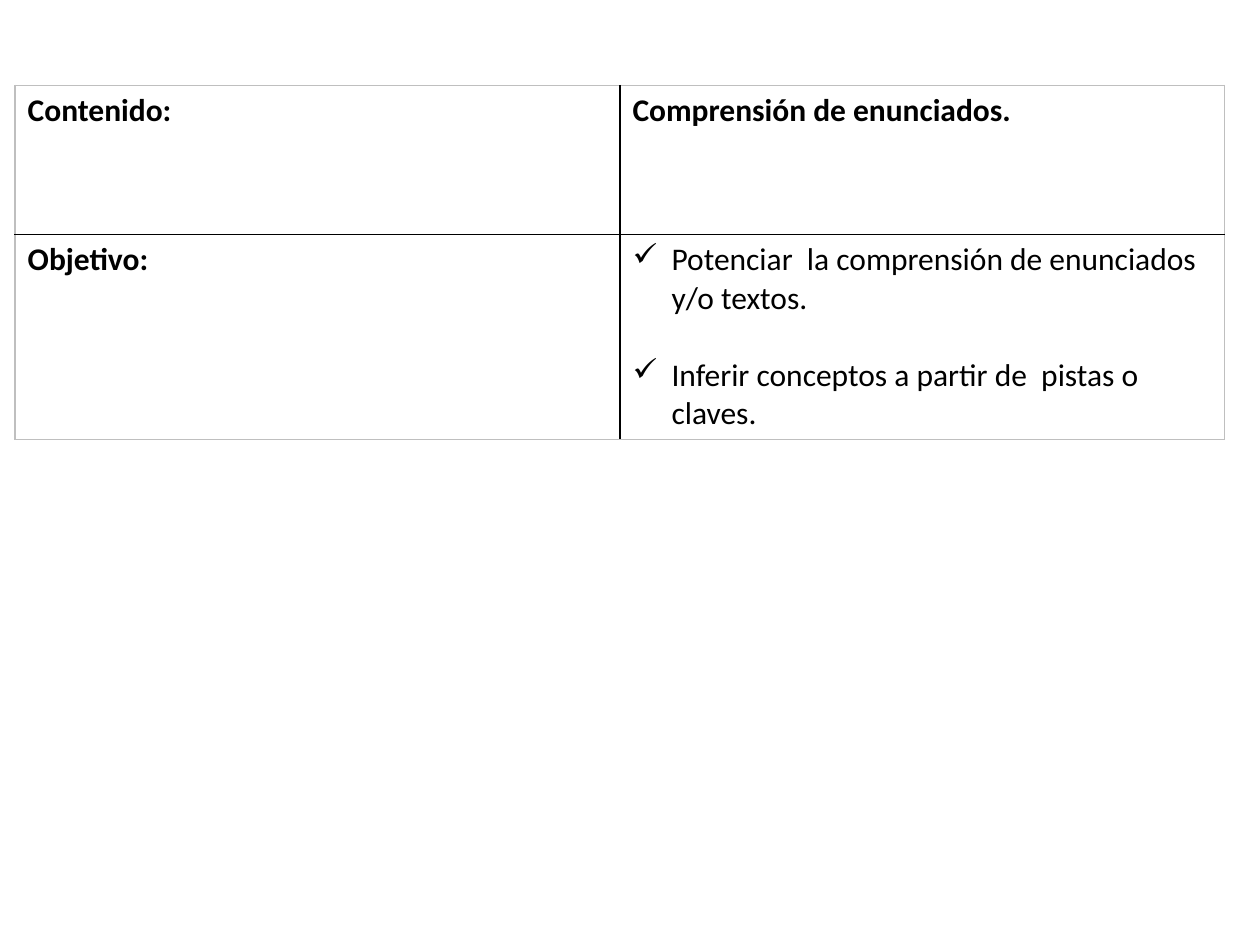
from lxml.etree import SubElement
from pptx import Presentation
from pptx.dml.color import RGBColor
from pptx.oxml.ns import qn
from pptx.util import Inches, Pt

BLACK = RGBColor(0x00, 0x00, 0x00)
GRAY = RGBColor(0xBF, 0xBF, 0xBF)
FONT = "Calibri"
ROWS = [
    ("Contenido:", "Comprensión de enunciados."),
    ("Objetivo:", [
        "Potenciar  la comprensión de enunciados y/o textos.",
        "Inferir conceptos a partir de  pistas o claves.",
    ]),
]
ROW_HEIGHTS = [1.18, 1.62]
COLUMN_WIDTH = 4.8
INDENT = Inches(0.31)


def add_border(cell, side, color):
    line = SubElement(cell._tc.get_or_add_tcPr(), qn(f"a:{side}"), w=str(Pt(1)))
    fill = SubElement(line, qn("a:solidFill"))
    SubElement(fill, qn("a:srgbClr"), val=str(color))


def add_check(paragraph):
    properties = paragraph._p.get_or_add_pPr()
    properties.set("marL", str(INDENT))
    properties.set("indent", str(-INDENT))
    SubElement(properties, qn("a:buChar"), char="✓")


def fill_cell(cell, content):
    is_list = isinstance(content, list)
    lines = content if is_list else [content]
    cell.text_frame.text = "\n".join(lines)
    for index, paragraph in enumerate(cell.text_frame.paragraphs):
        if is_list:
            add_check(paragraph)
        if index:
            paragraph.space_before = Pt(22)
        for span in paragraph.runs:
            span.font.name = FONT
            span.font.size = Pt(18)
            span.font.bold = not is_list
            span.font.color.rgb = BLACK


deck = Presentation()
deck.slide_width, deck.slide_height = Inches(10), Inches(7.5)
page = deck.slides.add_slide(deck.slide_layouts[6])
frame = page.shapes.add_table(
    len(ROWS), 2, Inches(0.12), Inches(0.68),
    Inches(2 * COLUMN_WIDTH), Inches(sum(ROW_HEIGHTS)))
table = frame.table
table.first_row = table.horz_banding = False
for column in table.columns:
    column.width = Inches(COLUMN_WIDTH)

for row, contents in enumerate(ROWS):
    table.rows[row].height = Inches(ROW_HEIGHTS[row])
    for column, content in enumerate(contents):
        cell = table.cell(row, column)
        fill_cell(cell, content)
        outer_sides = {
            "lnL": column == 0,
            "lnR": column == len(contents) - 1,
            "lnT": row == 0,
            "lnB": row == len(ROWS) - 1,
        }
        for side, is_outer in outer_sides.items():
            add_border(cell, side, GRAY if is_outer else BLACK)
        cell.fill.background()

deck.save("out.pptx")
